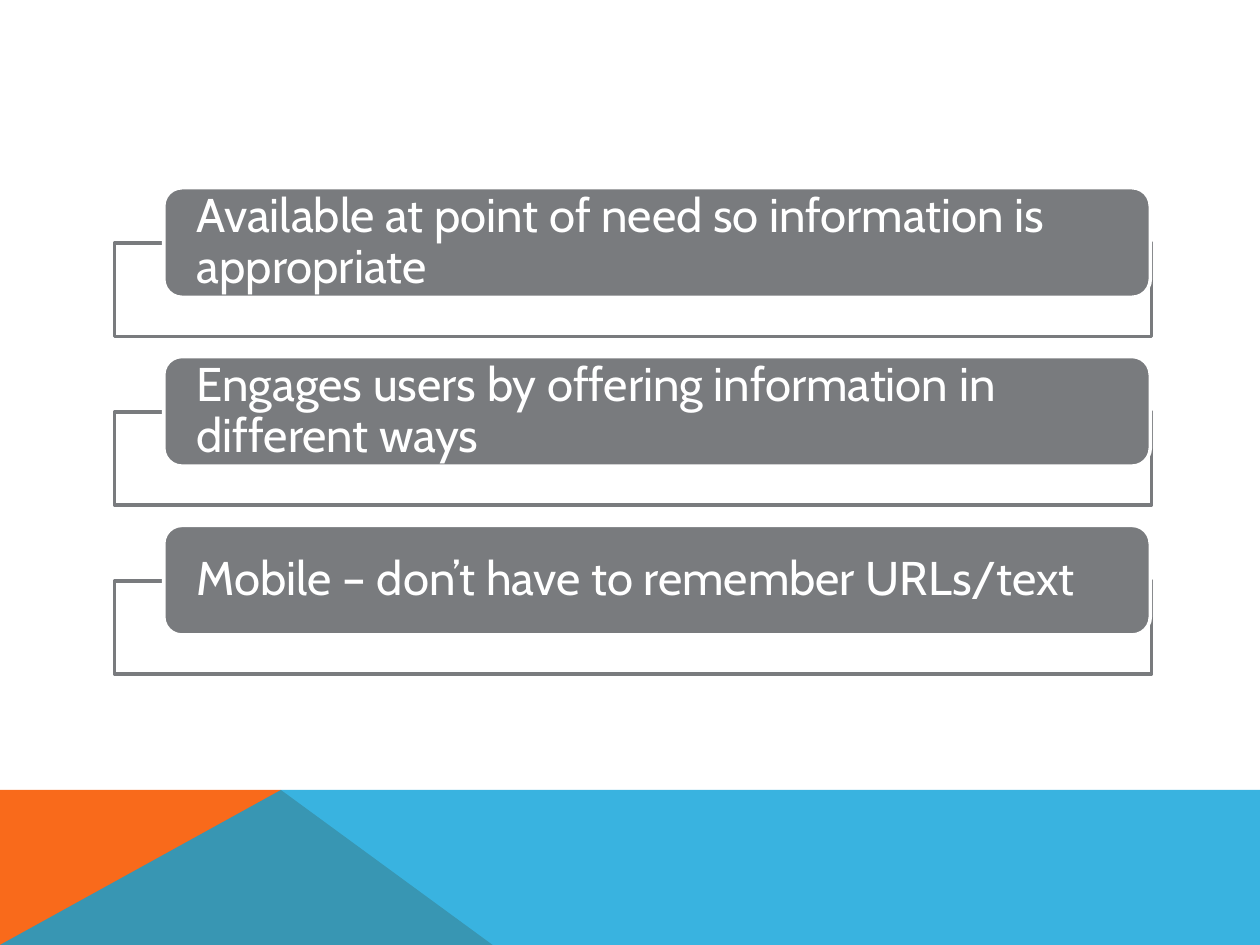
from lxml.etree import SubElement
from pptx import Presentation
from pptx.dml.color import RGBColor
from pptx.enum.shapes import MSO_SHAPE
from pptx.enum.text import MSO_ANCHOR, PP_ALIGN
from pptx.oxml.ns import qn
from pptx.util import Inches, Pt


def paint(shape, fill, line=None, opacity=100):
    shape.shadow.inherit = False
    shape.fill.solid()
    shape.fill.fore_color.rgb = RGBColor.from_string(fill)
    if opacity < 100:
        color = shape.fill._xPr.find(qn("a:solidFill"))[0]
        SubElement(color, qn("a:alpha")).set("val", str(opacity * 1000))
    if line:
        shape.line.color.rgb = RGBColor.from_string(line)
        shape.line.width = Pt(2)
    else:
        shape.line.fill.background()


GRAY, WHITE = "797B7E", "FFFFFF"

prs = Presentation()
prs.slide_width, prs.slide_height = Inches(10), Inches(7.5)
slide = prs.slides.add_slide(prs.slide_layouts[6])

# Footer band: orange wedge under a translucent blue one
band_top, band_bottom, peak = 6.27, 7.5, 2.23
wedges = [
    ([(0, band_bottom), (0, band_top), (peak, band_top), (3.91, band_bottom)], "F96A1B", 100),
    ([(0, band_bottom), (peak, band_top), (10, band_top), (10, band_bottom)], "08A1D9", 80),
]
for corners, color, opacity in wedges:
    points = [(Inches(x), Inches(y)) for x, y in corners]
    outline = slide.shapes.build_freeform(*points[0], scale=1.0)
    outline.add_line_segments(points[1:], close=True)
    paint(outline.convert_to_shape(), color, opacity=opacity)

# Benefits: an outlined frame with a rounded label over its top edge
benefits = [
    "Available at point of need so information is appropriate",
    "Engages users by offering information in different ways",
    "Mobile – don’t have to remember URLs/text",
]
first_top, pitch = 1.49, 1.34
for i, benefit in enumerate(benefits):
    top = first_top + i * pitch
    frame = slide.shapes.add_shape(
        MSO_SHAPE.RECTANGLE, Inches(0.91), Inches(top + 0.44), Inches(8.23), Inches(0.74))
    paint(frame, WHITE, GRAY, opacity=90)

    label = slide.shapes.add_shape(
        MSO_SHAPE.ROUNDED_RECTANGLE, Inches(1.3), Inches(top), Inches(7.83), Inches(0.87))
    paint(label, GRAY, WHITE)
    text = label.text_frame
    text.text = benefit
    text.word_wrap = True
    text.vertical_anchor = MSO_ANCHOR.MIDDLE
    # The rounded corners already inset the text by 0.04
    text.margin_left = text.margin_right = Inches(0.22)
    text.margin_top = text.margin_bottom = 0
    paragraph = text.paragraphs[0]
    paragraph.alignment = PP_ALIGN.LEFT
    paragraph.line_spacing = 0.9
    font = paragraph.runs[0].font
    font.name, font.size = "Cabin", Pt(27)
    font.color.rgb = RGBColor.from_string(WHITE)

prs.save("out.pptx")
